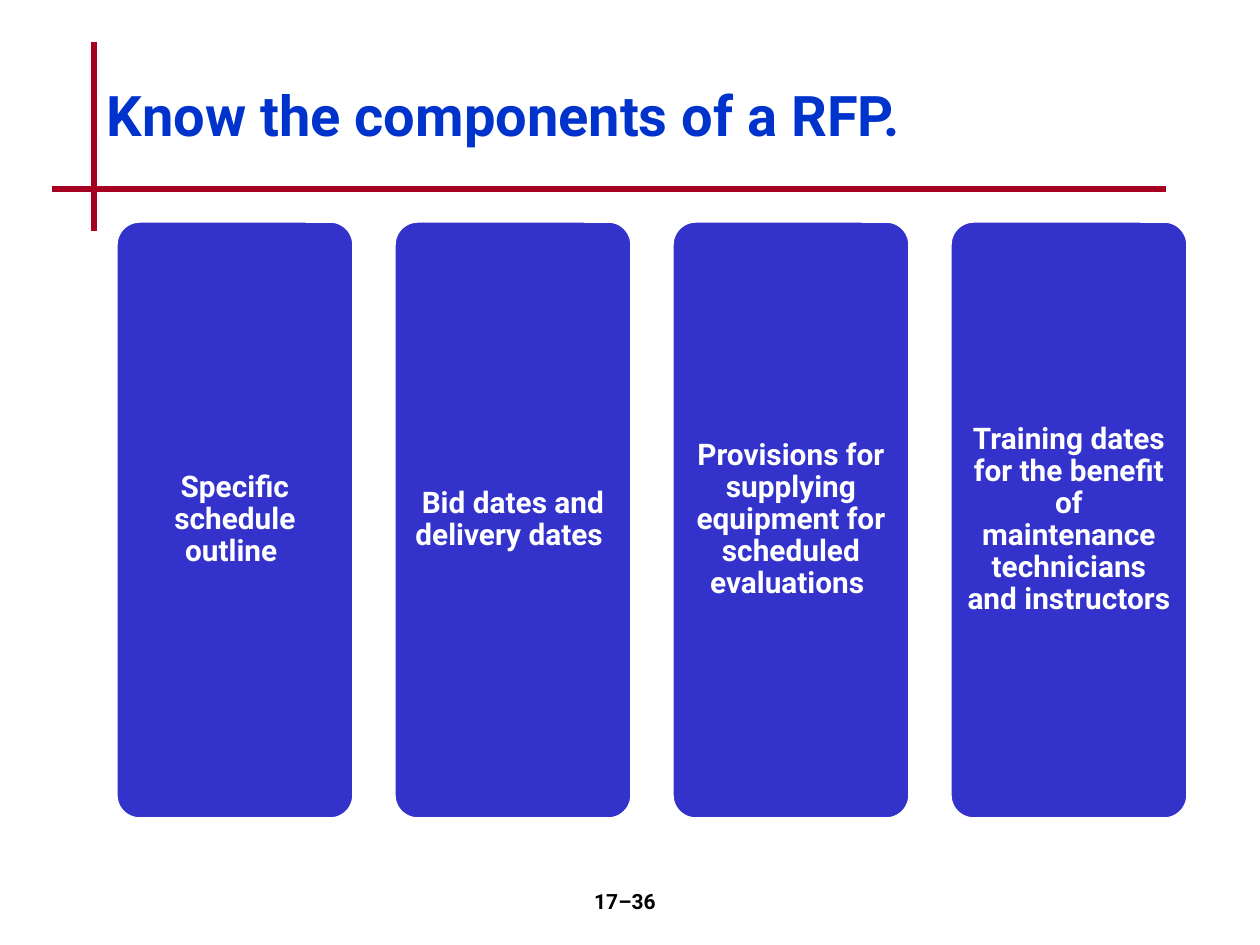
from lxml import etree
from pptx import Presentation, util as u
from pptx.dml.color import RGBColor
from pptx.enum import shapes, text
from pptx.oxml.ns import qn

EMU_PER_PX = 914400 / 126


def px(length):
    return u.Emu(round(length * EMU_PER_PX))


def color(hex_string):
    return RGBColor.from_string(hex_string)


class SlideBuilder:
    font = "Roboto"
    rule_color = "A50021"
    title_color = "0033CC"
    card_color = "3333CC"
    white = "FFFFFF"
    black = "000000"

    def __init__(self, slide):
        self.slide = slide

    def add_words(self, frame, words, size, hex_string, align, anchor,
                  spacing=1.0):
        frame.word_wrap = True
        frame.auto_size = text.MSO_AUTO_SIZE.NONE
        frame.vertical_anchor = anchor
        paragraph = frame.paragraphs[0]
        paragraph.alignment = align
        paragraph.line_spacing = spacing
        run = paragraph.add_run()
        run.text = words
        run.font.name = self.font
        run.font.size = u.Pt(size)
        run.font.bold = True
        run.font.color.rgb = color(hex_string)

    def rule(self, x1, y1, x2, y2):
        line = self.slide.shapes.add_connector(
            shapes.MSO_CONNECTOR.STRAIGHT, px(x1), px(y1), px(x2), px(y2))
        line.line.color.rgb = color(self.rule_color)
        line.line.width = u.Pt(3)
        etree.SubElement(line._element.spPr, qn("a:effectLst"))

    def title(self, words, left, top, width, height):
        title = self.slide.shapes.title
        title.left, title.top = px(left), px(top)
        title.width, title.height = px(width), px(height)
        self.add_words(title.text_frame, words, 32, self.title_color,
                       text.PP_ALIGN.LEFT, text.MSO_ANCHOR.MIDDLE, 0.8)

    def card(self, words, left, top, width, height):
        card = self.slide.shapes.add_shape(
            shapes.MSO_SHAPE.ROUNDED_RECTANGLE,
            px(left), px(top), px(width), px(height))
        card.adjustments[0] = 0.1
        card.shadow.inherit = False
        card.fill.solid()
        card.fill.fore_color.rgb = color(self.card_color)
        card.line.color.rgb = color(self.white)
        card.line.width = u.Pt(2)
        frame = card.text_frame
        frame.margin_left = frame.margin_right = px(9)
        frame.margin_top = frame.margin_bottom = px(9)
        self.add_words(frame, words, 17, self.white,
                       text.PP_ALIGN.CENTER, text.MSO_ANCHOR.MIDDLE, 0.9)

    def page_number(self, words, left, top, width, height):
        box = self.slide.shapes.add_textbox(
            px(left), px(top), px(width), px(height))
        self.add_words(box.text_frame, words, 12, self.black,
                       text.PP_ALIGN.CENTER, text.MSO_ANCHOR.TOP)


def main():
    presentation = Presentation()
    presentation.slide_width, presentation.slide_height = px(1260), px(945)
    title_only = presentation.slide_layouts[5]
    builder = SlideBuilder(presentation.slides.add_slide(title_only))

    # Crossed rules and title
    builder.rule(94, 42, 94, 231)
    builder.rule(52, 189, 1166, 189)
    builder.title("Know the components of a RFP.", 94, 42, 1071, 157)

    # Row of RFP components
    components = [
        "Specific schedule outline ",
        "Bid dates and delivery dates ",
        "Provisions for supplying equipment for scheduled evaluations ",
        "Training dates for the benefit of maintenance technicians "
        "and instructors",
    ]
    card_width, gap = 238, 40
    for index, component in enumerate(components):
        builder.card(component, 116 + index * (card_width + gap), 221,
                     card_width, 598)

    # Page number
    builder.page_number("17–36", 494, 882, 262, 63)

    presentation.save("out.pptx")


if __name__ == "__main__":
    main()
